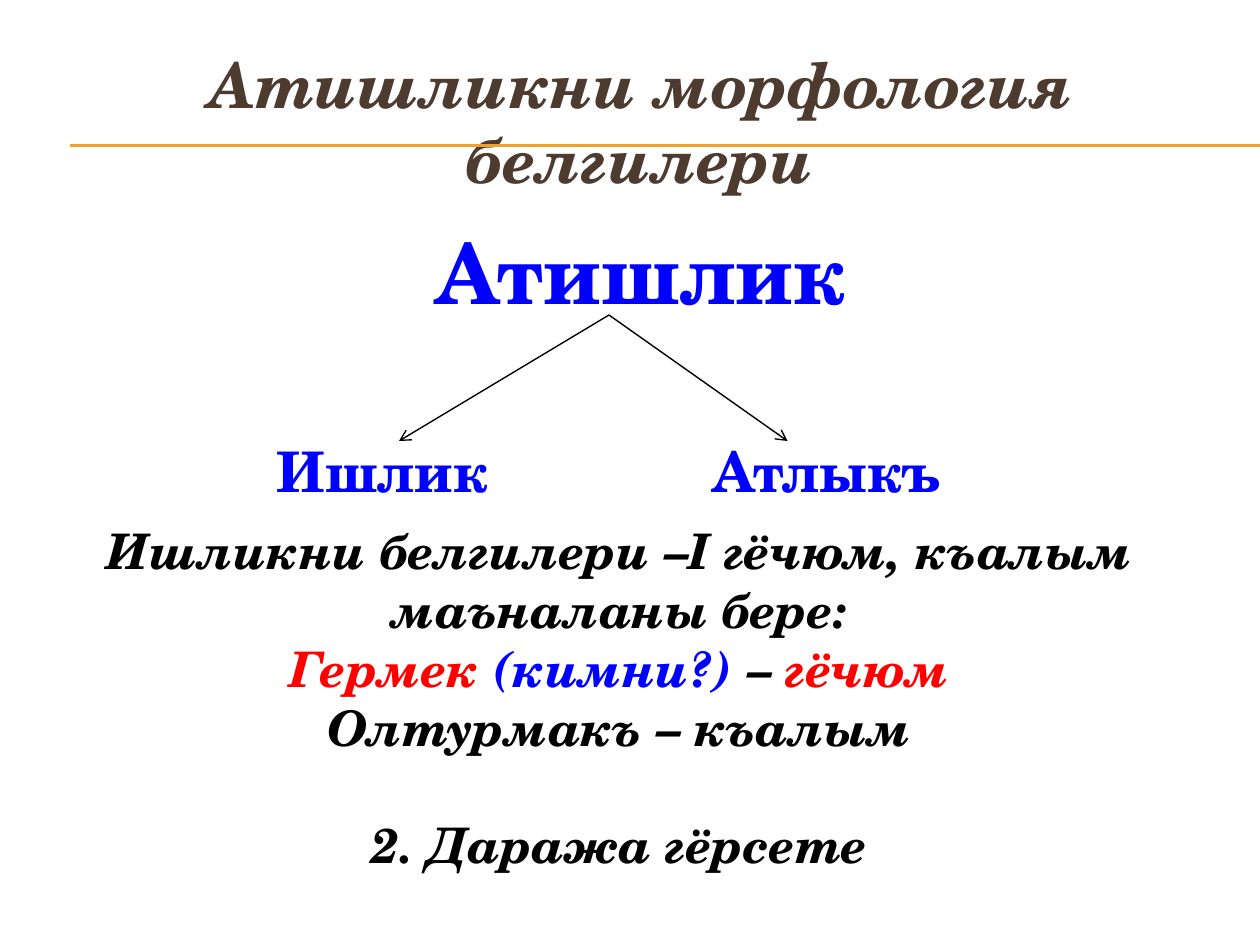
from lxml.etree import SubElement
from pptx import Presentation
from pptx.dml.color import RGBColor
from pptx.enum.shapes import MSO_CONNECTOR
from pptx.enum.text import MSO_ANCHOR, MSO_AUTO_SIZE, PP_ALIGN
from pptx.oxml.ns import qn
from pptx.util import Inches, Pt

FONT = "TeX Gyre Schola"
COLORS = {
    "rule": "F0A22E",
    "title": "4E3B30",
    "term": "0000FF",
    "key": "FF0000",
    "ink": "000000",
}
UNIT = Inches(10) / 120


def grid(*cells):
    return [round(cell * UNIT) for cell in cells]


def write(frame, paragraphs, size, color, italic=False, anchor=MSO_ANCHOR.TOP, gaps=None):
    frame.word_wrap = True
    frame.auto_size = MSO_AUTO_SIZE.NONE
    frame.vertical_anchor = anchor
    for index, pieces in enumerate(paragraphs):
        paragraph = frame.add_paragraph() if index else frame.paragraphs[0]
        paragraph.alignment = PP_ALIGN.CENTER
        paragraph.space_before = Pt((gaps or {}).get(index, 0))
        for words, piece_color in pieces:
            run = paragraph.add_run()
            run.text = words
            font = run.font
            font.name, font.size = FONT, Pt(size)
            font.bold, font.italic = True, italic
            font.color.rgb = RGBColor.from_string(COLORS[piece_color or color])


def add_text(slide, box, paragraphs, **style):
    write(slide.shapes.add_textbox(*grid(*box)).text_frame, paragraphs, **style)


def add_line(slide, start, end, color, width, arrow=False):
    line = slide.shapes.add_connector(MSO_CONNECTOR.STRAIGHT, *grid(*start, *end))
    line.line.color.rgb = RGBColor.from_string(COLORS[color])
    line.line.width = Pt(width)
    if arrow:
        SubElement(line.line._get_or_add_ln(), qn("a:tailEnd"), type="arrow")
    SubElement(line._element.spPr, qn("a:effectLst"))


def add_rules(slide, left, top, right):
    for offset in (0, 0.12):
        add_line(slide, (left, top + offset), (right, top + offset), "rule", 0.75)


def place_title(slide, box, words):
    title = slide.shapes.title
    title.left, title.top, title.width, title.height = grid(*box)
    write(title.text_frame, [[(words, None)]], size=36, color="title",
          italic=True, anchor=MSO_ANCHOR.MIDDLE)


def add_tree(slide, box, root, branches):
    left, top, width, height = box
    add_text(slide, (left, top, width, height), [[(root, None)]], size=48, color="term")
    fork = (left + 54, top + 9.6)
    label_width = 36
    for words, tip, center in branches:
        add_line(slide, fork, (left + tip, top + 21.6), "ink", 0.79, arrow=True)
        label_box = (left + center - label_width / 2, top + 20.6, label_width, 7.7)
        add_text(slide, label_box, [[(words, None)]], size=32, color="term")


def add_features(slide, box):
    paragraphs = [
        [("Ишликни белгилери –I гёчюм, къалым маъналаны бере:", None)],
        [("Гермек ", "key"), ("(кимни?) ", "term"), ("– ", None), ("гёчюм", "key")],
        [("Олтурмакъ – къалым", None)],
        [("2. Даража гёрсете", None)],
    ]
    add_text(slide, box, paragraphs, size=28, color="ink", italic=True, gaps={3: 33.6})


def main():
    deck = Presentation()
    deck.slide_width, deck.slide_height = grid(120, 90)
    slide = deck.slides.add_slide(deck.slide_layouts[5])
    add_rules(slide, 6.7, 13.8, 120)
    place_title(slide, (4, 6, 114, 11), "Атишликни морфология белгилери")
    add_tree(slide, (4, 20.4, 114, 24.6), "Атишлик",
             [("Ишлик", 34, 32.4), ("Атлыкъ", 71, 74.7)])
    add_features(slide, (4, 49, 110, 35.2))
    deck.save("out.pptx")


if __name__ == "__main__":
    main()
